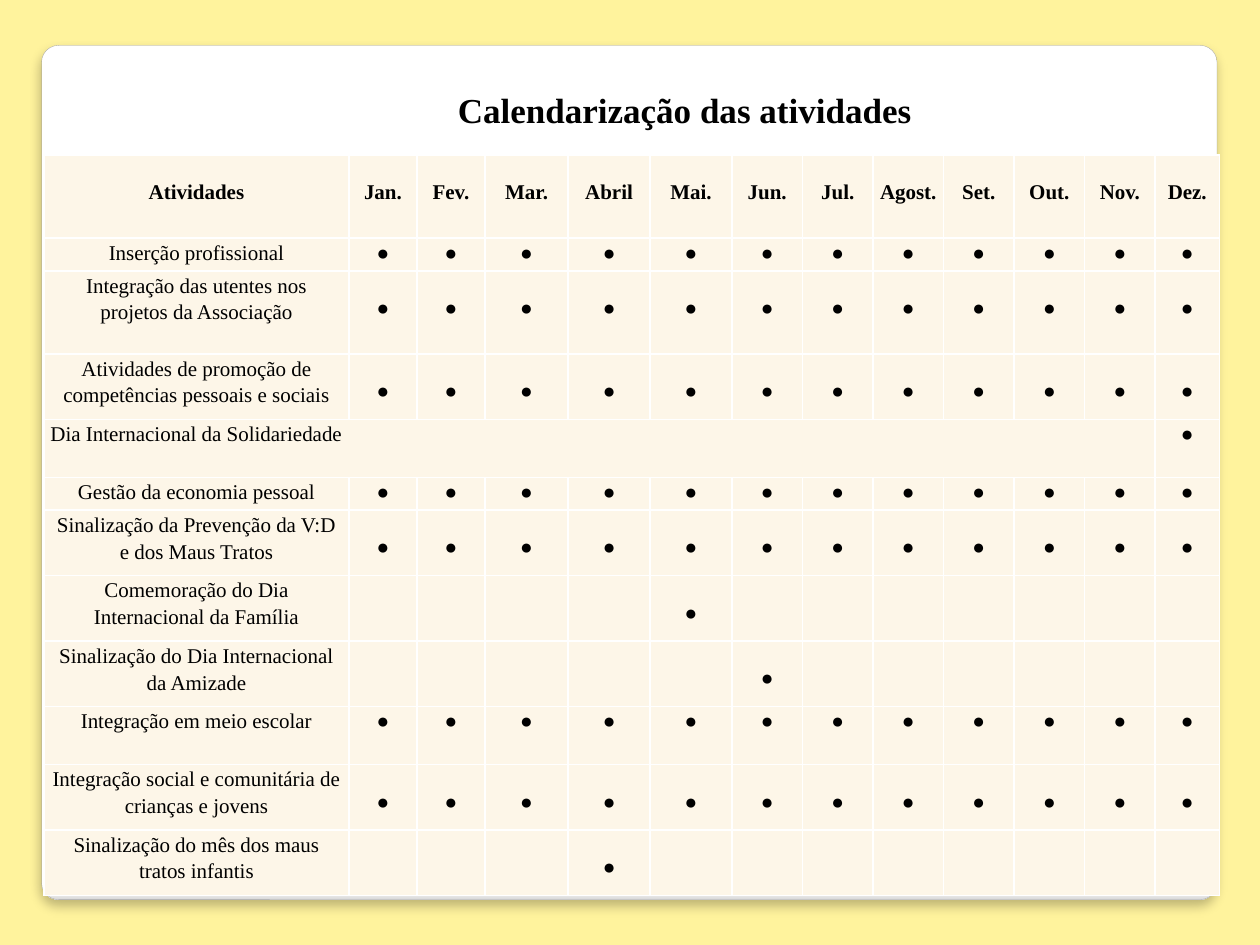
from lxml import etree
from pptx import Presentation
from pptx.dml.color import RGBColor
from pptx.enum.shapes import MSO_SHAPE
from pptx.enum.text import MSO_AUTO_SIZE, PP_ALIGN
from pptx.oxml import parse_xml
from pptx.util import Inches, Pt

ROUNDED = MSO_SHAPE.ROUNDED_RECTANGLE
LEFT, CENTER = PP_ALIGN.LEFT, PP_ALIGN.CENTER
FIT_SHAPE = MSO_AUTO_SIZE.SHAPE_TO_FIT_TEXT
NS = "http://schemas.openxmlformats.org/drawingml/2006/main"
FONT = "Times New Roman"
COLORS = {
    "background": "FFF39D", "outline": "A4A4A4", "cell": "FDF6E8",
    "border": "FFFFFF", "text": "000000", "shadow": "000000",
}
PANEL_STOPS = [(0, "FFFFFF"), (98, "FFFFFF"), (99, "F7F7F7"), (100, "DADADA")]
MONTHS = ["Jan.", "Fev.", "Mar.", "Abril", "Mai.", "Jun.", "Jul.",
          "Agost.", "Set.", "Out.", "Nov.", "Dez."]
YEAR = range(1, 13)
LOWERED = 0.18
ACTIVITIES = [
    ("Inserção profissional", YEAR, 0.26, 0),
    ("Integração das utentes nos projetos da Associação", YEAR, 0.66, LOWERED),
    ("Atividades de promoção de competências pessoais e sociais", YEAR, 0.52, LOWERED),
    ("Dia Internacional da Solidariedade", [12], 0.46, 0),
    ("Gestão da economia pessoal", YEAR, 0.26, 0),
    ("Sinalização da Prevenção da V:D e dos Maus Tratos", YEAR, 0.52, LOWERED),
    ("Comemoração do Dia Internacional da Família", [5], 0.52, LOWERED),
    ("Sinalização do Dia Internacional da Amizade", [6], 0.52, LOWERED),
    ("Integração em meio escolar", YEAR, 0.46, 0),
    ("Integração social e comunitária de crianças e jovens", YEAR, 0.52, LOWERED),
    ("Sinalização do mês dos maus tratos infantis", [4], 0.52, LOWERED),
]
MERGED_ROW = 4
COLUMN_WIDTHS = [2.42, 0.54, 0.54, 0.66, 0.65, 0.65] + [0.56] * 6 + [0.51]


def write(frame, text, size=12, bold=False, align=CENTER):
    paragraph = frame.paragraphs[0]
    paragraph.alignment = align
    paragraph.line_spacing = 1.15
    run = paragraph.add_run()
    run.text = text
    for name, value in {"name": FONT, "size": Pt(size), "bold": bold}.items():
        setattr(run.font, name, value)
    run.font.color.rgb = RGBColor.from_string(COLORS["text"])


def fill_cell(cell, text="", top=0, **style):
    margins = {"margin_left": 0.05, "margin_right": 0.05,
               "margin_top": top, "margin_bottom": 0}
    for name, value in margins.items():
        setattr(cell, name, Inches(value))
    cell.fill.solid()
    cell.fill.fore_color.rgb = RGBColor.from_string(COLORS["cell"])
    properties = cell._tc.get_or_add_tcPr()
    for position, side in enumerate(["lnL", "lnR", "lnT", "lnB"]):
        border = etree.fromstring(
            f'<a:{side} xmlns:a="{NS}" w="12700"><a:solidFill>'
            f'<a:srgbClr val="{COLORS["border"]}"/></a:solidFill></a:{side}>')
        properties.insert(position, border)
    if text:
        write(cell.text_frame, text, **style)


prs = Presentation()
prs.slide_width, prs.slide_height = Inches(10), Inches(7.5)
slide = prs.slides.add_slide(prs.slide_layouts[6])
slide.background.fill.solid()
slide.background.fill.fore_color.rgb = RGBColor.from_string(COLORS["background"])

panel = slide.shapes.add_shape(ROUNDED, Inches(0.33), Inches(0.36), Inches(9.33), Inches(6.78))
panel.adjustments[0] = 0.02
panel.line.color.rgb = RGBColor.from_string(COLORS["outline"])
panel.line.width = Pt(0.16)
stops = "".join(f'<a:gs pos="{percent * 1000}"><a:srgbClr val="{color}"/></a:gs>'
                for percent, color in PANEL_STOPS)
panel_properties = panel._element.spPr
panel_properties.insert(2, parse_xml(
    f'<a:gradFill xmlns:a="{NS}"><a:gsLst>{stops}</a:gsLst>'
    '<a:lin ang="5400000" scaled="0"/></a:gradFill>'))
panel_properties.append(parse_xml(
    f'<a:effectLst xmlns:a="{NS}"><a:outerShdw blurRad="{Pt(6)}" dist="{Pt(4)}" '
    f'dir="5400000" rotWithShape="0"><a:srgbClr val="{COLORS["shadow"]}">'
    '<a:alpha val="25000"/></a:srgbClr></a:outerShdw></a:effectLst>'))

row_heights = [0.66] + [height for _, _, height, _ in ACTIVITIES]
calendar = slide.shapes.add_table(
    len(row_heights), len(COLUMN_WIDTHS), Inches(0.35), Inches(1.23),
    Inches(sum(COLUMN_WIDTHS)), Inches(sum(row_heights))).table
calendar.first_row = calendar.horz_banding = False
for column, width in zip(calendar.columns, COLUMN_WIDTHS):
    column.width = Inches(width)
for row, height in zip(calendar.rows, row_heights):
    row.height = Inches(height)

for col, heading in enumerate(["Atividades"] + MONTHS):
    fill_cell(calendar.cell(0, col), heading, LOWERED, bold=True)
for row, (activity, active_months, _, dot_top) in enumerate(ACTIVITIES, 1):
    align = LEFT if row == MERGED_ROW else CENTER
    fill_cell(calendar.cell(row, 0), activity, align=align)
    for month in YEAR:
        dot = "●" if month in active_months else ""
        fill_cell(calendar.cell(row, month), dot, dot_top)
calendar.cell(MERGED_ROW, 0).merge(calendar.cell(MERGED_ROW, 11))

title = slide.shapes.add_textbox(Inches(2.72), Inches(0.6), Inches(5.43), Inches(0.46))
title.text_frame.word_wrap = True
title.text_frame.auto_size = FIT_SHAPE
write(title.text_frame, "Calendarização das atividades", size=20, bold=True)
title.text_frame.paragraphs[0].space_after = Pt(10)

prs.save("out.pptx")
